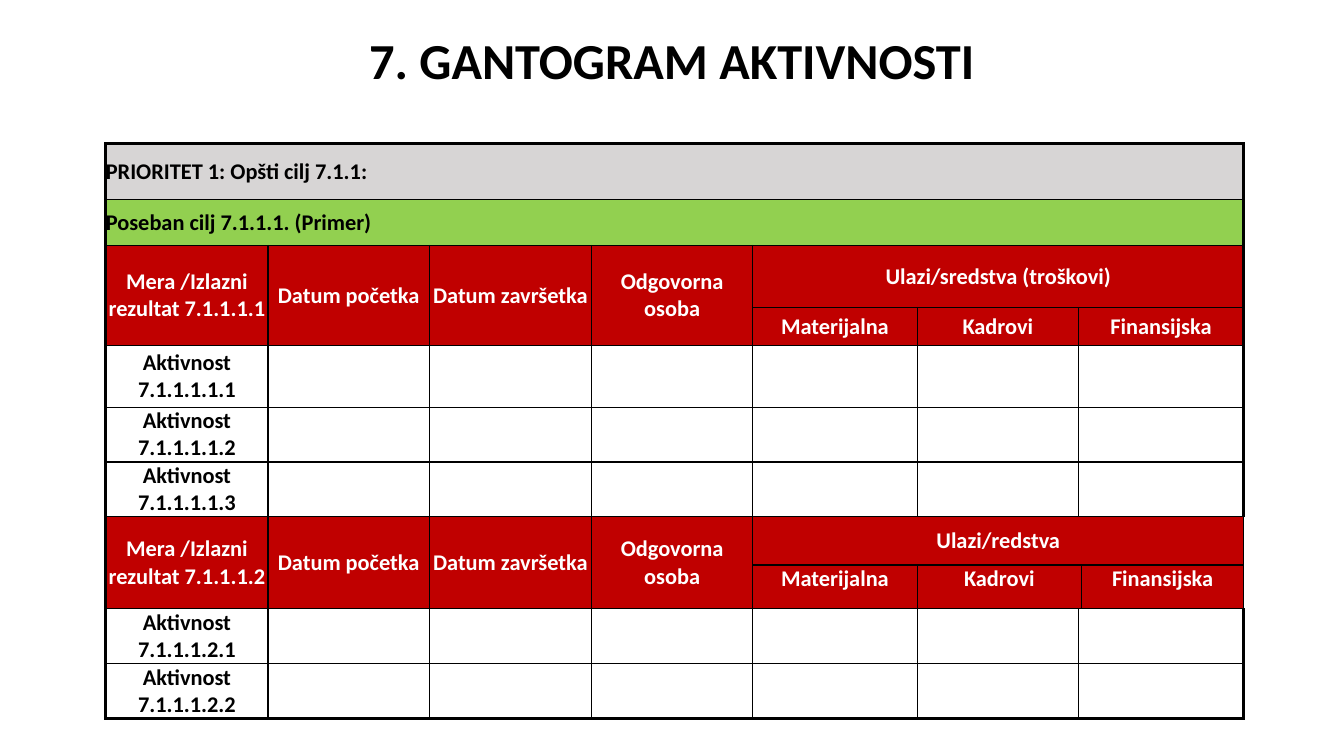
from dataclasses import dataclass
from typing import Optional

import pptx
import pptx.dml.color
import pptx.enum.text
import pptx.util
from lxml import etree
from pptx.oxml.ns import qn

Pt = pptx.util.Pt
Align = pptx.enum.text.PP_ALIGN
Anchor = pptx.enum.text.MSO_ANCHOR


@dataclass(frozen=True)
class Theme:
    font: str = "Calibri"
    head: int = 36
    body: int = 16
    black: str = "000000"
    white: str = "FFFFFF"
    gray: str = "D7D5D5"
    green: str = "92D050"
    red: str = "C00000"
    thin: float = 1
    thick: float = 2.25


@dataclass(frozen=True)
class Box:
    row: int
    col: int
    text: str = ""
    tall: int = 1
    wide: int = 1
    fill: Optional[str] = None
    ink: str = "000000"
    align: Align = Align.CENTER
    anchor: Anchor = Anchor.MIDDLE


THEME = Theme()
COLS = [115.9, 115.2, 115.9, 115.2, 117.4, 115.2, 2.2, 115.9]
ROWS = [39.6, 33.2, 44.3, 27.2, 44, 39.2, 39.2, 34.3, 31.4, 39.2, 39.2]
OPEN_ROWS = (7, 8)  # rows without a thick right edge


def style(para, size: int, ink: str, align: Align) -> None:
    para.alignment = align
    font = para.font
    font.name, font.size, font.bold = THEME.font, Pt(size), True
    font.color.rgb = pptx.dml.color.RGBColor.from_string(ink)


def add_edge(cell, side: str, width: float) -> None:
    line = etree.SubElement(cell._tc.get_or_add_tcPr(), qn("a:ln" + side), w=str(Pt(width)))
    fill = etree.SubElement(line, qn("a:solidFill"))
    etree.SubElement(fill, qn("a:srgbClr"), val=THEME.black)


def draw_box(table, box: Box) -> None:
    end_row, end_col = box.row + box.tall, box.col + box.wide
    thick = {
        "L": box.col == 0,
        "R": end_col == len(COLS) and box.row not in OPEN_ROWS,
        "T": box.row == 0,
        "B": end_row == len(ROWS),
    }
    for row in range(box.row, end_row):
        for col in range(box.col, end_col):
            cell = table.cell(row, col)
            for side, bold in thick.items():
                add_edge(cell, side, THEME.thick if bold else THEME.thin)
            if box.fill:
                cell.fill.solid()
                cell.fill.fore_color.rgb = pptx.dml.color.RGBColor.from_string(box.fill)
            else:
                cell.fill.background()

    cell = table.cell(box.row, box.col)
    if box.tall * box.wide > 1:
        cell.merge(table.cell(end_row - 1, end_col - 1))
    cell.margin_left = cell.margin_right = cell.margin_top = cell.margin_bottom = 0
    cell.vertical_anchor = box.anchor
    cell.text = box.text
    for para in cell.text_frame.paragraphs:
        style(para, THEME.body, box.ink, box.align)


def band(row: int, text: str, fill: str) -> Box:
    return Box(row, 0, text, wide=len(COLS), fill=fill, align=Align.LEFT)


def header(row: int, code: str, costs: str, splits: list[int], anchor: Anchor) -> list[Box]:
    """Two header rows; splits holds the left columns of the cost cells."""
    look = {"fill": THEME.red, "ink": THEME.white}
    names = ["Mera /Izlazni rezultat " + code, "Datum početka", "Datum završetka", "Odgovorna osoba"]
    boxes = [Box(row, col, name, tall=2, **look) for col, name in enumerate(names)]
    boxes.append(Box(row, 4, costs, wide=4, **look))
    ends = splits[1:] + [len(COLS)]
    for name, col, end in zip(["Materijalna", "Kadrovi", "Finansijska"], splits, ends):
        boxes.append(Box(row + 1, col, name, wide=end - col, anchor=anchor, **look))
    return boxes


def task(row: int, code: str, gap: str = "\n") -> list[Box]:
    blanks = [Box(row, col) for col in range(1, 6)]
    return [Box(row, 0, "Aktivnost" + gap + code), *blanks, Box(row, 6, wide=2)]


def main() -> None:
    deck = pptx.Presentation()
    deck.slide_width, deck.slide_height = Pt(960), Pt(540)
    slide = deck.slides.add_slide(deck.slide_layouts[5])

    # Title
    title = slide.shapes.title
    title.left, title.top, title.width, title.height = Pt(48), Pt(0), Pt(864), Pt(90)
    title.text_frame.text = "7. GANTOGRAM AKTIVNOSTI"
    title.text_frame.vertical_anchor = Anchor.MIDDLE
    para = title.text_frame.paragraphs[0]
    para.line_spacing = 0.9
    style(para, THEME.head, THEME.black, Align.CENTER)

    # Table grid
    frame = slide.shapes.add_table(
        len(ROWS), len(COLS), Pt(75.6), Pt(102.6), Pt(sum(COLS)), Pt(sum(ROWS)))
    table = frame.table
    table.first_row = table.horz_banding = False
    for col, width in zip(table.columns, COLS):
        col.width = Pt(width)
    for row, height in zip(table.rows, ROWS):
        row.height = Pt(height)

    # Table content
    boxes = [
        band(0, "PRIORITET 1: Opšti cilj 7.1.1:", THEME.gray),
        band(1, "Poseban cilj 7.1.1.1. (Primer)", THEME.green),
        *header(2, "7.1.1.1.1", "Ulazi/sredstva (troškovi)", [4, 5, 6], Anchor.MIDDLE),
        *task(4, "7.1.1.1.1.1", " "),
        *task(5, "7.1.1.1.1.2"),
        *task(6, "7.1.1.1.1.3"),
        *header(7, "7.1.1.1.2", "Ulazi/redstva", [4, 5, 7], Anchor.TOP),
        *task(9, "7.1.1.1.2.1"),
        *task(10, "7.1.1.1.2.2"),
    ]
    for box in boxes:
        draw_box(table, box)

    deck.save("out.pptx")


if __name__ == "__main__":
    main()
